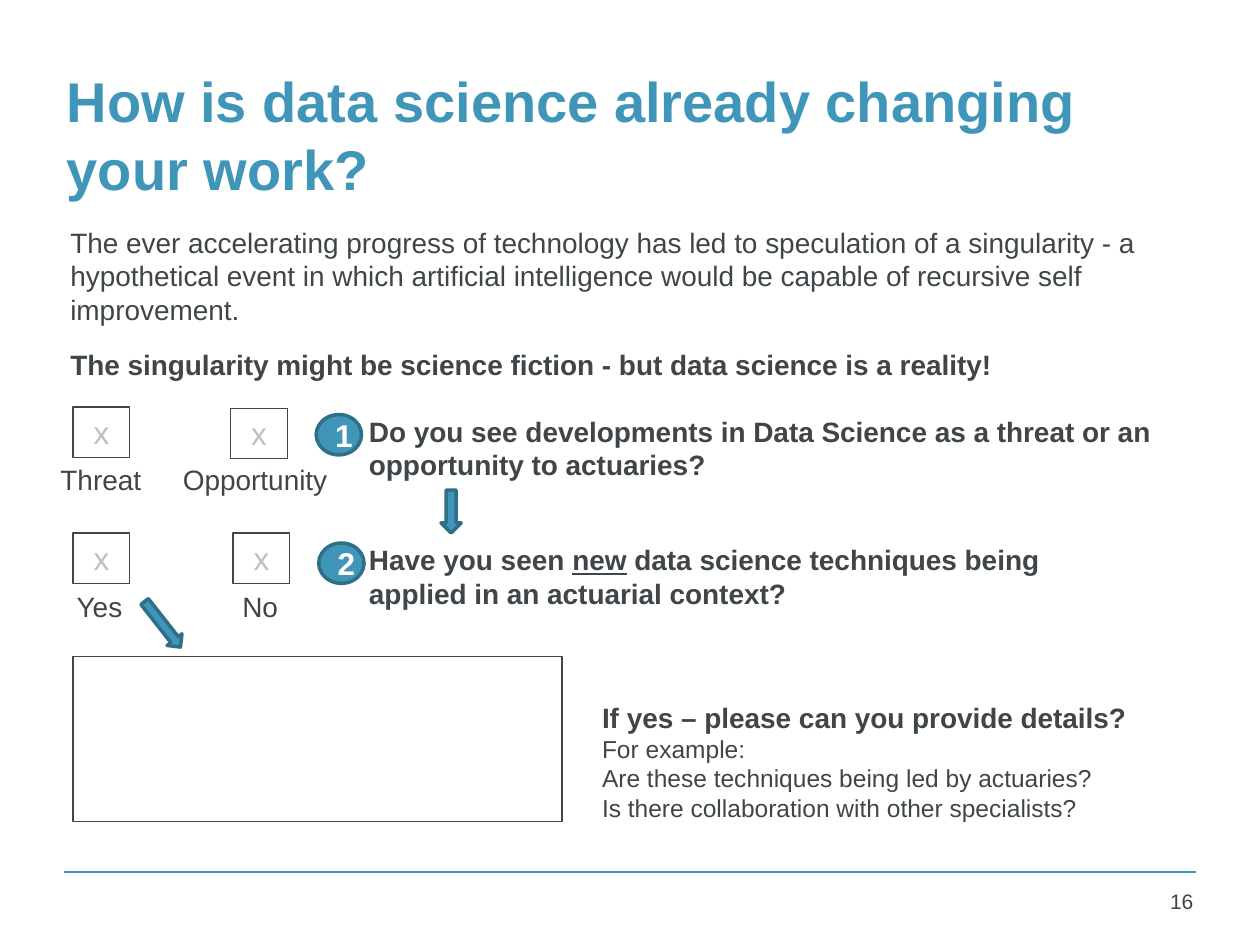
"""Build the survey slide on how data science is changing actuarial work."""
import pptx
import pptx.util
import pptx.dml.color
import pptx.enum.shapes
import pptx.enum.text
import pptx.oxml

Inches, Pt = pptx.util.Inches, pptx.util.Pt
RGB = pptx.dml.color.RGBColor.from_string
SHAPE = pptx.enum.shapes.MSO_SHAPE
ALIGN = pptx.enum.text.PP_ALIGN
ANCHOR = pptx.enum.text.MSO_ANCHOR
COLORS = {"teal": "4096B8", "edge": "2F6F88", "text": "3F4548", "grey": "BFBFBF", "white": "FFFFFF"}


def write(sp, paragraphs, color="text", align=ALIGN.LEFT, anchor=ANCHOR.TOP):
    """Fill a shape with paragraphs, each a list of (text, font values)."""
    tf = sp.text_frame
    for name, value in {"word_wrap": True, "vertical_anchor": anchor,
                        "auto_size": pptx.enum.text.MSO_AUTO_SIZE.NONE}.items():
        setattr(tf, name, value)
    for i, runs in enumerate(paragraphs):
        p = tf.add_paragraph() if i else tf.paragraphs[0]
        p.alignment = align
        for text, values in runs:
            r = p.add_run()
            r.text = text
            for name, value in {"name": "Arial", "size": Pt(16), "bold": False, **values}.items():
                setattr(r.font, name, value)
            r.font.color.rgb = RGB(COLORS[color])
    return tf


def add_box(kind, box, fill=None, line="text", width=0.75):
    """Add a flat preset shape."""
    sp = s.shapes.add_shape(kind, *map(Inches, box))
    sp.shadow.inherit = False
    if fill:
        sp.fill.solid()
        sp.fill.fore_color.rgb = RGB(COLORS[fill])
    else:
        sp.fill.background()
    sp.line.color.rgb = RGB(COLORS[line])
    sp.line.width = Pt(width)
    return sp


prs = pptx.Presentation()
prs.slide_width, prs.slide_height = Inches(10), Inches(7.5)
s = prs.slides.add_slide(prs.slide_layouts[5])

rule = s.shapes.add_connector(pptx.enum.shapes.MSO_CONNECTOR.STRAIGHT,
                              Inches(0.51), Inches(6.92), Inches(9.49), Inches(6.92))
rule.line.color.rgb = RGB(COLORS["teal"])
rule.line.width = Pt(1)
rule._element.spPr.append(pptx.oxml.parse_xml(
    '<a:effectLst xmlns:a="http://schemas.openxmlformats.org/drawingml/2006/main"/>'))

title = s.shapes.title
title.left, title.top, title.width, title.height = map(Inches, (0.43, 0.44, 9.07, 1.25))
write(title, [[("How is data science already changing your work?", {"size": Pt(32), "bold": True})]],
      "teal", anchor=ANCHOR.MIDDLE)

bold, small = {"bold": True}, {"size": Pt(14)}
left, center, right = ALIGN.LEFT, ALIGN.CENTER, ALIGN.RIGHT
texts = [
    ((0.46, 1.74, 9.07, 1.4), left, 12, [
        [("The ever accelerating progress of technology has led to speculation of a singularity - a "
          "hypothetical event in which artificial intelligence would be capable of recursive self "
          "improvement.", {})],
        [("The singularity might be science fiction - but data science is a reality!", bold)]]),
    ((2.83, 3.24, 6.56, 0.64), left, 0, [
        [("Do you see developments in Data Science as a threat or an opportunity to actuaries?", bold)]]),
    ((2.83, 4.26, 6.32, 0.64), left, 0, [
        [("Have you seen ", bold), ("new", {"bold": True, "underline": True}),
         (" data science techniques being applied in an actuarial context?", bold)]]),
    ((4.68, 5.51, 5.13, 1.08), left, 0, [
        [("If yes – please can you provide details?", bold)],
        [("For example:", small)],
        [("Are these techniques being led by actuaries?", small)],
        [("Is there collaboration with other specialists?", small)]]),
    ((0.34, 3.62, 0.92, 0.37), center, 0, [[("Threat", {})]]),
    ((1.34, 3.62, 1.37, 0.37), center, 0, [[("Opportunity", {})]]),
    ((0.37, 4.63, 0.84, 0.37), center, 0, [[("Yes", {})]]),
    ((1.5, 4.63, 1.13, 0.37), center, 0, [[("No", {})]]),
    ((8.86, 7, 0.71, 0.37), right, 0, [[("16", {"size": Pt(12)})]]),
]
for box, align, gap, paragraphs in texts:
    tf = write(s.shapes.add_textbox(*map(Inches, box)), paragraphs, align=align)
    for p in tf.paragraphs[1:]:
        p.space_before = Pt(gap)

add_box(SHAPE.RECTANGLE, (0.58, 5.21, 3.88, 1.31))
for x, y in [(0.58, 3.23), (1.83, 3.24), (0.58, 4.23), (1.85, 4.23)]:
    sp = add_box(SHAPE.RECTANGLE, (x, y, 0.45, 0.4))
    write(sp, [[("x", {"size": Pt(18)})]], "grey", center)

for box, angle in [((3.41, 3.98, 0.34, 0.16), 90), ((1.06, 4.88, 0.46, 0.15), 51.8)]:
    add_box(SHAPE.RIGHT_ARROW, box, "teal", "edge", 2).rotation = angle

for number, x, y in [("1", 2.51, 3.29), ("2", 2.53, 4.31)]:
    sp = add_box(SHAPE.OVAL, (x, y, 0.36, 0.32), "teal", "edge", 2)
    write(sp, [[(number, {"size": Pt(18), "bold": True})]], "white", center, ANCHOR.MIDDLE)

prs.save("out.pptx")
